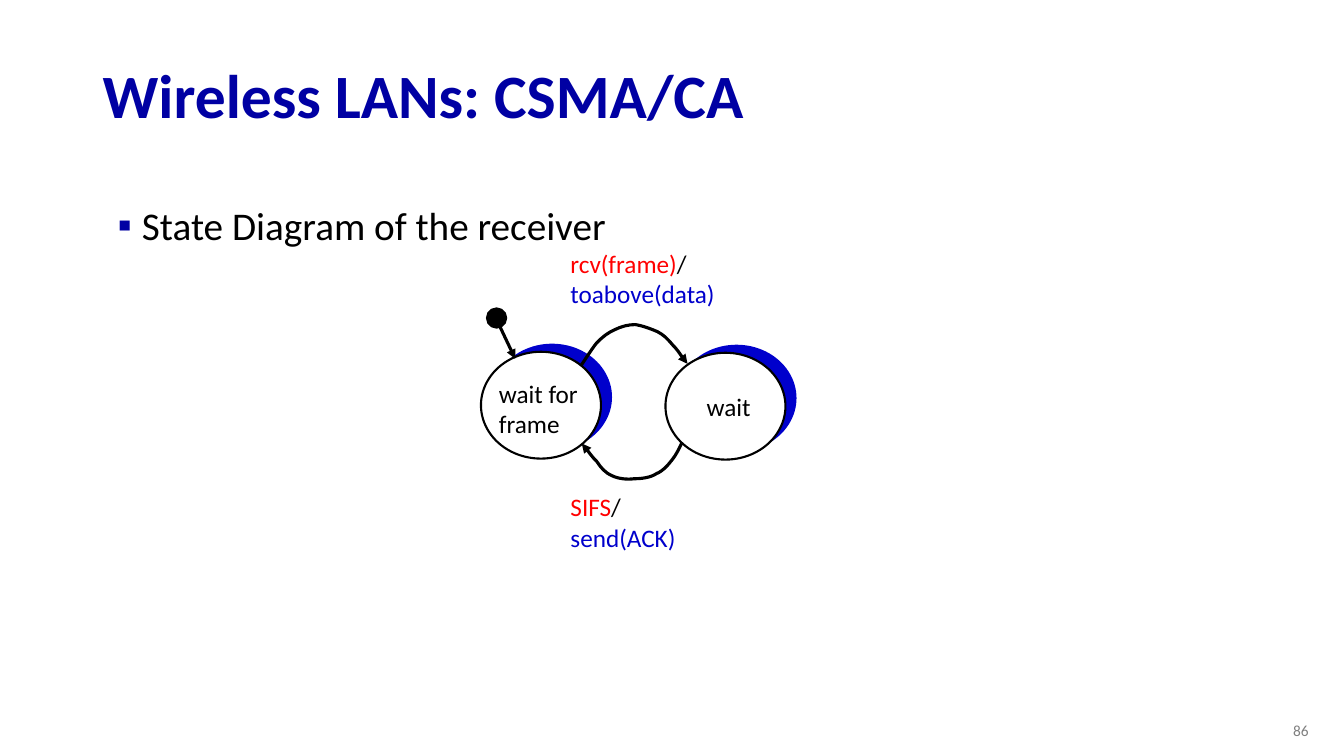
from lxml.etree import SubElement as Sub
from pptx import Presentation
from pptx.dml.color import RGBColor as RGB
from pptx.enum.shapes import MSO_CONNECTOR as LINK, MSO_SHAPE as SHAPE
from pptx.enum.text import MSO_ANCHOR as ANCHOR, PP_ALIGN as ALIGN
from pptx.oxml.ns import qn
from pptx.util import Inches, Pt

NAVY = RGB(0x00, 0x00, 0xA3)
BLUE = RGB(0x00, 0x00, 0xCC)
RED = RGB(0xFF, 0x00, 0x00)
BLACK = RGB(0x00, 0x00, 0x00)
WHITE = RGB(0xFF, 0xFF, 0xFF)
GRAY = RGB(0x80, 0x80, 0x80)

CELL = Inches(0.1)


def grid(*cells):
    return [round(c * CELL) for c in cells]


def apply(target, values):
    for name, value in values.items():
        setattr(target, name, value)


class Board:
    font = "Calibri"
    thin = Pt(1.5)
    thick = Pt(2.25)
    disc = (11.9, 10.6)
    depth = (1.1, -0.8)

    def __init__(self, deck):
        self.slide = deck.slides.add_slide(deck.slide_layouts[6])
        self.shapes = self.slide.shapes

    def text(self, box, lines, size=18, bold=False, wrap=True, bullet=None,
             anchor=ANCHOR.TOP, **form):
        frame = self.shapes.add_textbox(*grid(*box)).text_frame
        apply(frame, {"word_wrap": wrap, "vertical_anchor": anchor})
        for i, runs in enumerate(lines):
            para = frame.add_paragraph() if i else frame.paragraphs[0]
            if bullet:
                self.mark(para, bullet)
            apply(para, form)
            for words, color in runs:
                for n, part in enumerate(words.split("\n")):
                    if n:
                        para.add_line_break()
                    if part:
                        run = para.add_run()
                        run.text = part
                        apply(run.font, {"name": self.font, "size": Pt(size), "bold": bold})
                        run.font.color.rgb = color

    def mark(self, para, bullet):
        sign, color = bullet
        props = para._p.get_or_add_pPr()
        props.set("marL", str(Inches(0.39)))
        props.set("indent", str(Inches(-0.24)))
        tint = Sub(props, qn("a:buClr"))
        Sub(tint, qn("a:srgbClr")).set("val", str(color))
        Sub(props, qn("a:buFont")).set("typeface", self.font)
        Sub(props, qn("a:buChar")).set("char", sign)

    def oval(self, box, fill, edge=None, home=None):
        oval = (home or self.shapes).add_shape(SHAPE.OVAL, *grid(*box))
        oval.shadow.inherit = False
        oval.fill.solid()
        oval.fill.fore_color.rgb = fill
        if edge is None:
            oval.line.fill.background()
        else:
            oval.line.color.rgb = edge
            oval.line.width = self.thin

    def state(self, left, top):
        home = self.shapes.add_group_shape().shapes
        right, down = self.depth
        self.oval((left + right, top + down, *self.disc), BLUE, home=home)
        self.oval((left, top, *self.disc), WHITE, BLACK, home)

    def arrow(self, shape):
        shape.line.color.rgb = BLACK
        shape.line.width = self.thick
        Sub(shape.line._get_or_add_ln(), qn("a:tailEnd")).set("type", "triangle")

    def line(self, start, end):
        link = self.shapes.add_connector(LINK.STRAIGHT, *grid(*start, *end))
        self.arrow(link)
        Sub(link._element.spPr, qn("a:effectLst"))

    def curve(self, start, *points):
        pen = self.shapes.build_freeform(*grid(*start))
        pen.add_line_segments([grid(*p) for p in points], close=False)
        arc = pen.convert_to_shape()
        arc.shadow.inherit = False
        arc.fill.background()
        self.arrow(arc)
        steps = list(arc._element.iter(qn("a:lnTo")))
        trace = steps[0].getparent()
        for i, step in enumerate(steps):
            if i % 3 == 0:
                bend = Sub(trace, qn("a:cubicBezTo"))
            bend.append(step[0])
            trace.remove(step)


def main():
    deck = Presentation()
    apply(deck, {"slide_width": Inches(13.33), "slide_height": Inches(7.5)})
    board = Board(deck)

    board.text((100.8, 70.5, 30, 4), [[("86", GRAY)]], size=11,
               anchor=ANCHOR.MIDDLE, alignment=ALIGN.RIGHT)
    board.text((9.2, 4.9, 115, 9.8), [[("Wireless LANs: CSMA/CA", NAVY)]], size=44,
               bold=True, anchor=ANCHOR.MIDDLE, line_spacing=0.9)
    board.text((9.2, 20, 115, 47.6), [[("State Diagram of the receiver", BLACK)]],
               size=28, bullet=("▪", NAVY), line_spacing=0.9)

    board.state(47.7, 34.9)
    board.text((48.5, 37, 10.4, 7), [[("wait for\nframe", BLACK)]], wrap=False)
    board.curve((57.6, 36.3),
                (57.9, 35.9), (58.7, 34.6), (59.2, 34),
                (59.8, 33.4), (60.3, 33), (61, 32.7),
                (61.6, 32.4), (62.3, 32.2), (63, 32.2),
                (63.7, 32.3), (64.5, 32.6), (65.2, 32.9),
                (65.8, 33.2), (66.2, 33.6), (66.7, 34.2),
                (67.2, 34.7), (67.9, 35.8), (68.2, 36.1))
    board.line((49.3, 31.8), (51.1, 35.6))
    board.oval((48.3, 30.6, 1.9, 1.9), BLACK, BLACK)

    board.state(66, 35)
    board.text((69.1, 38.3, 7.4, 4), [[("wait", BLACK)]], wrap=False)
    board.text((55.6, 48.3, 13.6, 7),
               [[("SIFS", RED), ("/", BLACK)], [("send(ACK)", BLUE)]], wrap=False)
    board.text((55.6, 24.1, 18.6, 7),
               [[("rcv(frame)", RED), ("/\n", BLACK), ("toabove(data)", BLUE)]])
    board.curve((67.6, 44),
                (67.5, 44.2), (67.1, 45.1), (66.6, 45.7),
                (66.2, 46.2), (65.8, 46.7), (65.1, 47),
                (64.5, 47.4), (63.6, 47.5), (62.9, 47.5),
                (62.2, 47.6), (61.3, 47.5), (60.7, 47.2),
                (60, 46.9), (59.6, 46.4), (59.2, 45.8),
                (58.7, 45.3), (58, 44.3), (57.7, 44))
    deck.save("out.pptx")


if __name__ == "__main__":
    main()
